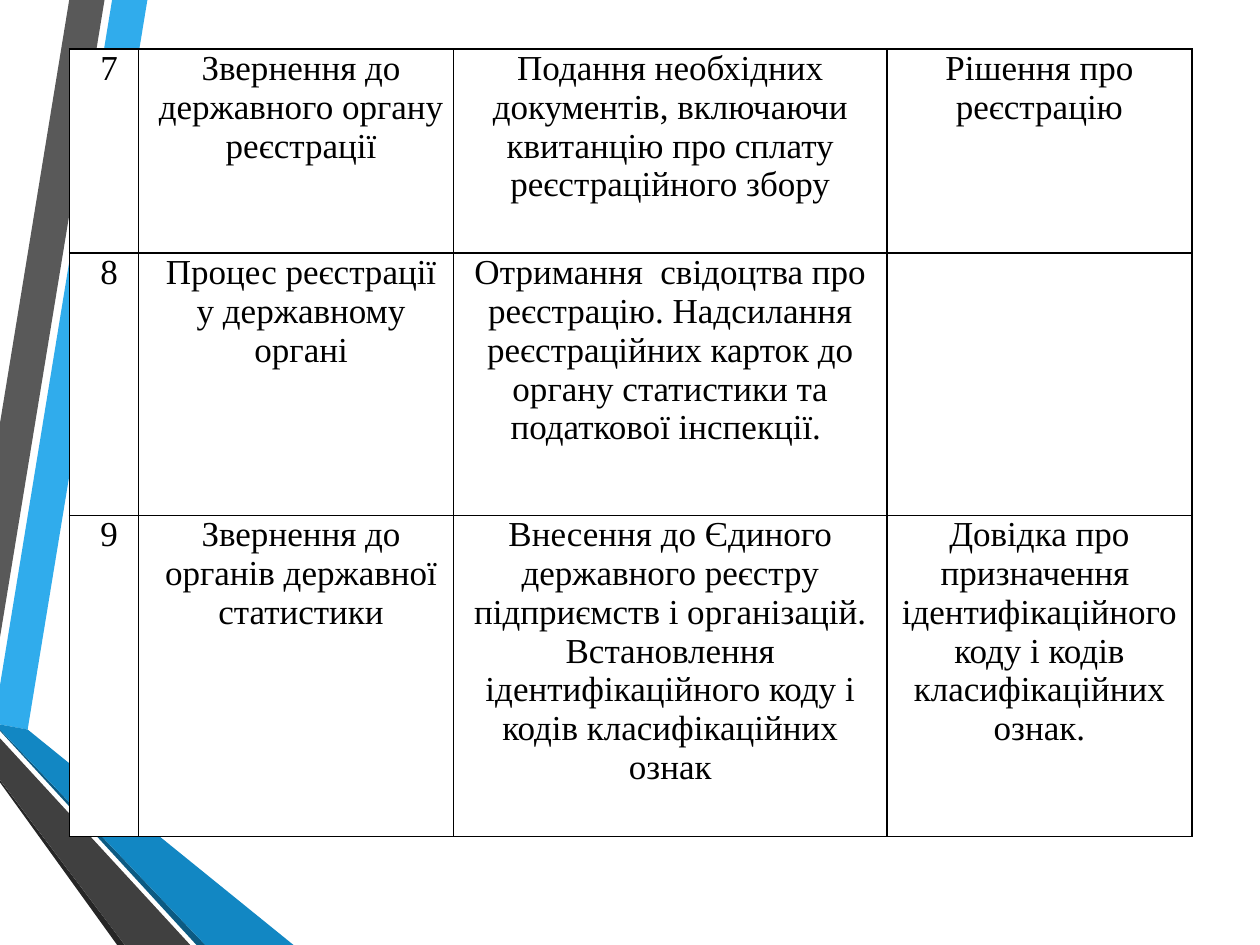
from dataclasses import dataclass

from lxml.etree import SubElement
from pptx import Presentation
from pptx.dml.color import RGBColor
from pptx.enum.text import PP_ALIGN
from pptx.oxml.ns import qn
from pptx.util import Inches, Pt


@dataclass(frozen=True)
class Theme:
    """Colours, font and sizes of the deck."""
    font: str = "Times New Roman"
    body: int = 20
    border: int = 1
    ink: str = "000000"
    paper: str = "FFFFFF"
    sky: str = "30ACEC"
    blue: str = "1287C3"
    navy: str = "0C5A82"
    grey: str = "595959"
    charcoal: str = "404040"
    shadow: str = "262626"


THEME = Theme()

RIBBONS = [
    (THEME.sky, [(0, 5.44), (0, 5.75), (0.22, 5.79), (1.17, 0), (0.89, 0)]),
    (THEME.grey, [(0.83, 0), (0.55, 0), (0, 3.36), (0, 5.06)]),
    (THEME.shadow, [(0, 6.19), (0, 6.21), (0.93, 7.5), (0.99, 7.5)]),
    (THEME.navy, [(0, 5.79), (0, 5.8), (1.56, 7.5), (1.63, 7.5)]),
    (THEME.blue, [(0, 5.79), (1.63, 7.5), (2.33, 7.5), (0.22, 5.79), (0, 5.75)]),
    (THEME.charcoal, [(0, 6.19), (0.99, 7.5), (1.51, 7.5), (0, 5.86)]),
]

COLUMN_WIDTHS = [0.55, 2.5, 3.44, 2.42]
ROW_HEIGHTS = [1.62, 2.08, 2.55]
INDENTED_COLUMNS = 2
STEPS = [
    ("7", "Звернення до державного органу реєстрації",
     "Подання необхідних документів, включаючи квитанцію про сплату реєстраційного збору",
     "Рішення про реєстрацію"),
    ("8", "Процес реєстрації у державному органі",
     "Отримання  свідоцтва про реєстрацію. Надсилання реєстраційних карток "
     "до органу статистики та податкової інспекції. ",
     ""),
    ("9", "Звернення до органів державної статистики",
     "Внесення до Єдиного державного реєстру підприємств і організацій. "
     "Встановлення ідентифікаційного коду і кодів класифікаційних ознак",
     "Довідка про призначення  ідентифікаційного коду і кодів класифікаційних ознак."),
]


def add_ribbons(page, left, top):
    """Draw the folded ribbons from the given corner."""
    for colour, points in RIBBONS:
        corners = [(left + Inches(x), top + Inches(y)) for x, y in points]
        builder = page.shapes.build_freeform(*corners[0])
        builder.add_line_segments(corners[1:], close=True)
        ribbon = builder.convert_to_shape()
        ribbon.shadow.inherit = False
        ribbon.fill.solid()
        ribbon.fill.fore_color.rgb = RGBColor.from_string(colour)
        ribbon.line.fill.background()


def add_borders(cell):
    """Put a thin solid line on every side of a cell."""
    properties = cell._tc.get_or_add_tcPr()
    for position, side in enumerate(("a:lnL", "a:lnR", "a:lnT", "a:lnB")):
        line = properties.makeelement(qn(side), {"w": str(Pt(THEME.border))})
        fill = SubElement(line, qn("a:solidFill"))
        SubElement(fill, qn("a:srgbClr"), val=THEME.ink)
        properties.insert(position, line)


def fill_cell(cell, text, indent):
    """Write and format one table cell."""
    cell.fill.solid()
    cell.fill.fore_color.rgb = RGBColor.from_string(THEME.paper)
    cell.margin_left = cell.margin_right = Inches(0.07)
    cell.margin_top = cell.margin_bottom = 0
    add_borders(cell)
    cell.text = text
    para = cell.text_frame.paragraphs[0]
    para.alignment = PP_ALIGN.CENTER
    para.font.name = THEME.font
    para.font.size = Pt(THEME.body)
    para.font.color.rgb = RGBColor.from_string(THEME.ink)
    para._p.get_or_add_pPr().set("marL", str(indent))


def add_steps_table(page, left, top, width, height):
    """Place the table of registration steps in the given box."""
    frame = page.shapes.add_table(len(STEPS), len(COLUMN_WIDTHS), left, top, width, height)
    table = frame.table
    table.first_row = table.horz_banding = False
    for column, column_width in zip(table.columns, COLUMN_WIDTHS):
        column.width = Inches(column_width)
    for row, row_height, step in zip(table.rows, ROW_HEIGHTS, STEPS):
        row.height = Inches(row_height)
        for index, (cell, text) in enumerate(zip(row.cells, step)):
            fill_cell(cell, text, Inches(0.08) if index < INDENTED_COLUMNS else 0)


def main():
    """Build and save the deck."""
    deck = Presentation()
    deck.slide_width, deck.slide_height = Inches(10), Inches(7.5)
    page = deck.slides.add_slide(deck.slide_layouts.get_by_name("Blank"))
    page.background.fill.solid()
    page.background.fill.fore_color.rgb = RGBColor.from_string(THEME.paper)
    add_ribbons(page, Inches(0), Inches(0))
    add_steps_table(page, Inches(0.55), Inches(0.39), Inches(8.91), Inches(6.25))
    deck.save("out.pptx")


if __name__ == "__main__":
    main()
